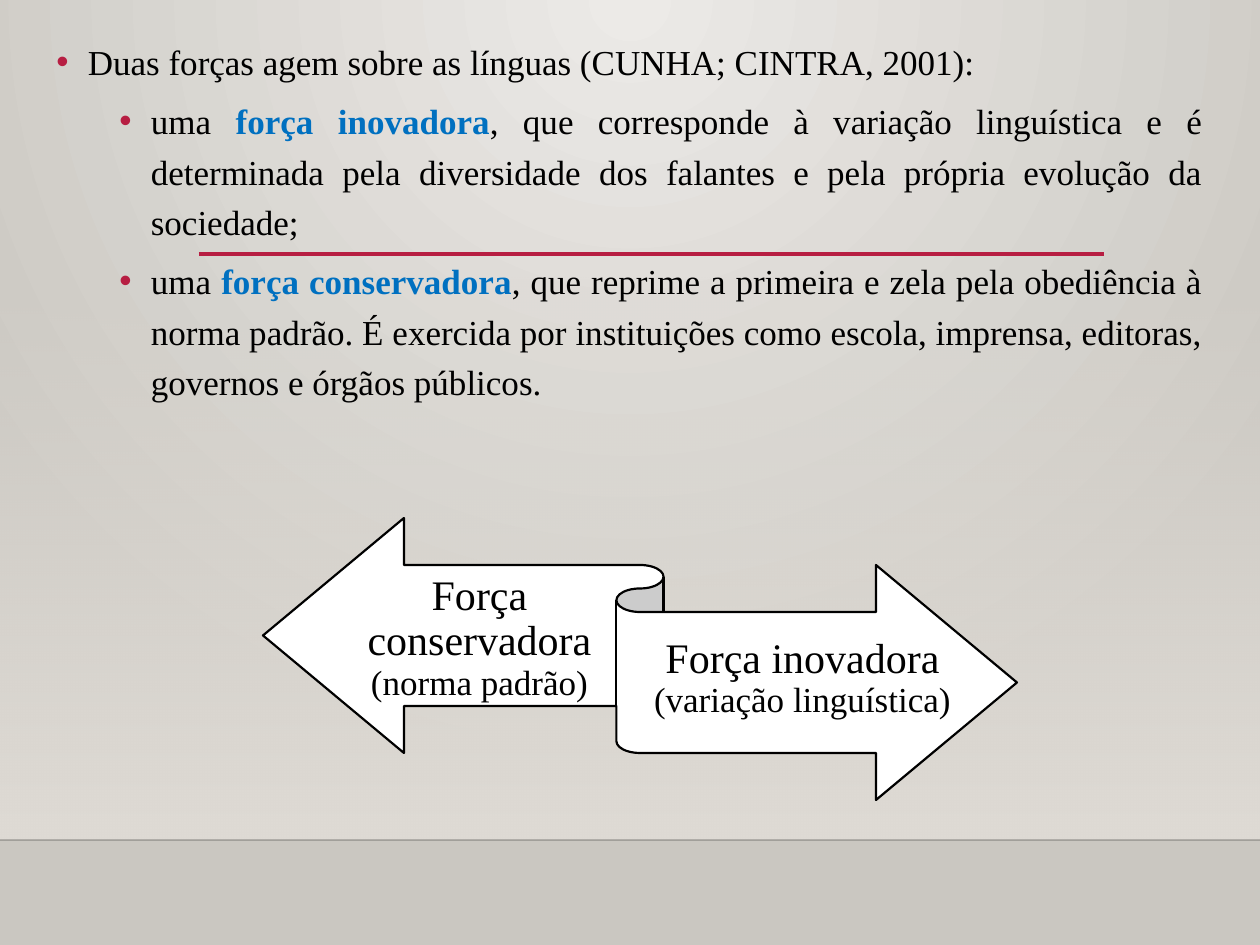
from lxml import etree
from pptx import Presentation
from pptx.dml.color import RGBColor
from pptx.enum.shapes import MSO_CONNECTOR, MSO_SHAPE
from pptx.enum.text import MSO_ANCHOR, PP_ALIGN
from pptx.oxml.ns import qn
from pptx.util import Emu, Pt

PX = 914400 / 126
FONT = "Times New Roman"
BLACK = RGBColor(0x00, 0x00, 0x00)
WHITE = RGBColor(0xFF, 0xFF, 0xFF)
BLUE = RGBColor(0x00, 0x70, 0xC0)
CRIMSON = RGBColor(0xB7, 0x1E, 0x42)
LIGHT = RGBColor(0xEC, 0xEA, 0xE7)
STONE = RGBColor(0xCA, 0xC7, 0xC1)
WALL = RGBColor(0xDF, 0xDB, 0xD5)
RECTANGLE = MSO_SHAPE.RECTANGLE
RIBBON = MSO_SHAPE.LEFT_RIGHT_RIBBON
STRAIGHT = MSO_CONNECTOR.STRAIGHT
CENTER, JUSTIFY = PP_ALIGN.CENTER, PP_ALIGN.JUSTIFY
TOP, MIDDLE = MSO_ANCHOR.TOP, MSO_ANCHOR.MIDDLE


def emu(*lengths):
    return [Emu(round(length * PX)) for length in lengths]


def add_child(parent, tag, **attributes):
    return etree.SubElement(parent, qn(tag), attributes)


def set_opacity(properties, percent):
    color = next(properties.iter(qn("a:srgbClr")))
    add_child(color, "a:alpha", val=str(percent * 1000))


class SlideBuilder:
    def __init__(self, presentation):
        self.slide = presentation.slides.add_slide(presentation.slide_layouts[6])
        self.shapes = self.slide.shapes

    def gradient(self, fill, colors):
        fill.gradient()
        for stop, color in zip(fill.gradient_stops, colors):
            stop.color.rgb = color

    def background(self, inner, outer):
        self.gradient(self.slide.background.fill, (inner, outer))
        linear = next(self.slide.element.iter(qn("a:lin")))
        gradient = linear.getparent()
        gradient.remove(linear)
        radial = add_child(gradient, "a:path", path="circle")
        add_child(radial, "a:fillToRect", l="43000", t="0", r="43000", b="100000")

    def shape(self, kind, box):
        shape = self.shapes.add_shape(kind, *emu(*box))
        shape.shadow.inherit = False
        return shape

    def fading_panel(self, box, color):
        panel = self.shape(RECTANGLE, box)
        self.gradient(panel.fill, (color, color))
        panel.fill.gradient_angle = 270
        set_opacity(panel.element.spPr, 0)
        panel.line.fill.background()

    def ribbon(self, box):
        ribbon = self.shape(RIBBON, box)
        ribbon.fill.solid()
        ribbon.fill.fore_color.rgb = WHITE
        ribbon.line.color.rgb = BLACK
        ribbon.line.width = Pt(1.25)

    def rule(self, left, right, y, color, width, opacity=100):
        rule = self.shapes.add_connector(STRAIGHT, *emu(left, y, right, y))
        rule.line.color.rgb = color
        rule.line.width = Pt(width)
        properties = rule.element.spPr
        if opacity < 100:
            set_opacity(properties, opacity)
        add_child(properties, "a:effectLst")

    def text_box(self, box, anchor):
        text_frame = self.shapes.add_textbox(*emu(*box)).text_frame
        text_frame.word_wrap = True
        text_frame.vertical_anchor = anchor
        return text_frame

    def add_run(self, paragraph, text, size, color=BLACK, bold=False):
        run = paragraph.add_run()
        run.text = text
        run.font.name = FONT
        run.font.size = Pt(size)
        run.font.bold = bold
        run.font.color.rgb = color

    def bullet(self, paragraph, level):
        properties = paragraph._p.get_or_add_pPr()
        margin, hanging = emu(94.5 if level else 31.5, 31.5)
        properties.set("marL", str(margin))
        properties.set("indent", str(-hanging))
        bullet_color = add_child(properties, "a:buClr")
        add_child(bullet_color, "a:srgbClr", val=str(CRIMSON))
        add_child(properties, "a:buFont", typeface="Arial")
        add_child(properties, "a:buChar", char="•")

    def bullet_list(self, box, items):
        text_frame = self.text_box(box, TOP)
        for index, (level, before, emphasis, after) in enumerate(items):
            paragraph = text_frame.add_paragraph() if index else text_frame.paragraphs[0]
            self.bullet(paragraph, level)
            paragraph.level = level
            paragraph.alignment = JUSTIFY
            paragraph.line_spacing = 1.2
            if index:
                paragraph.space_before = Pt(5)
            self.add_run(paragraph, before, 20)
            if emphasis:
                self.add_run(paragraph, emphasis, 20, BLUE, True)
                self.add_run(paragraph, after, 20)

    def arrow_label(self, box, title, detail):
        text_frame = self.text_box(box, MIDDLE)
        text_frame.margin_left = text_frame.margin_right = 0
        text_frame.margin_top, text_frame.margin_bottom = emu(11, 12)
        paragraph = text_frame.paragraphs[0]
        paragraph.alignment = CENTER
        paragraph.line_spacing = 0.9
        self.add_run(paragraph, title, 24)
        self.add_run(paragraph, detail, 20)


def main():
    presentation = Presentation()
    presentation.slide_width, presentation.slide_height = emu(1260, 945)
    builder = SlideBuilder(presentation)
    builder.background(LIGHT, STONE)
    builder.fading_panel((0, 277, 1260, 563), WALL)
    builder.rule(0, 1260, 840, BLACK, 1, opacity=20)
    builder.rule(199, 1104, 254, CRIMSON, 2.5)
    builder.bullet_list((44, 26, 1171, 794), [
        (0, "Duas forças agem sobre as línguas (CUNHA; CINTRA, 2001):", "", ""),
        (1, "uma ", "força inovadora",
         ", que corresponde à variação linguística e é determinada pela "
         "diversidade dos falantes e pela própria evolução da sociedade;"),
        (1, "uma ", "força conservadora",
         ", que reprime a primeira e zela pela obediência à norma padrão. "
         "É exercida por instituições como escola, imprensa, editoras, "
         "governos e órgãos públicos."),
    ])
    builder.ribbon((263, 518, 754, 282))
    builder.arrow_label((342, 557, 275, 164), "Força conservadora ", "(norma padrão)")
    builder.arrow_label((640, 597, 325, 164), "Força inovadora ", "(variação linguística)")
    presentation.save("out.pptx")


if __name__ == "__main__":
    main()
